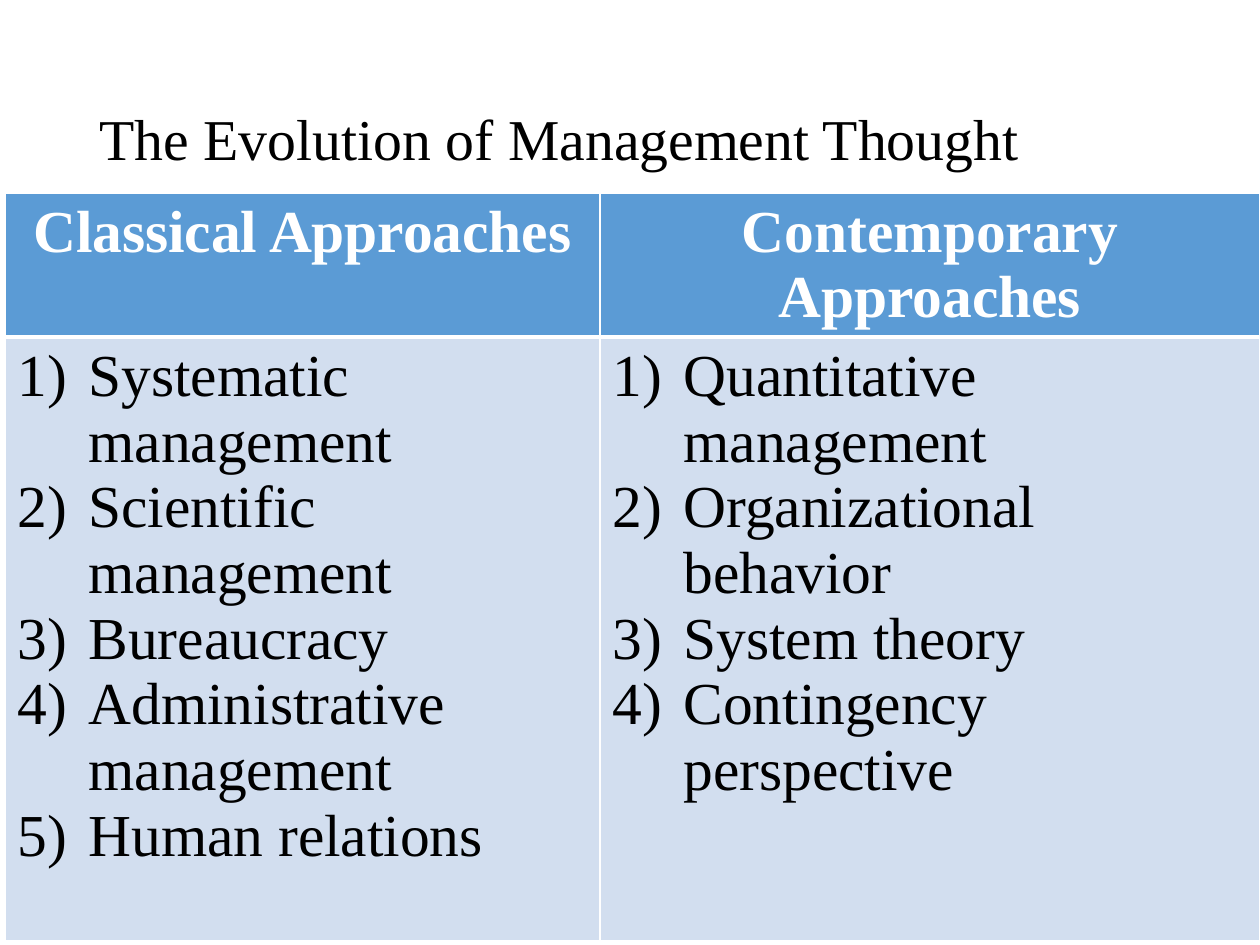
import pptx
import pptx.dml.color
import pptx.enum.text
import pptx.oxml.ns
import pptx.util
from lxml import etree

PX = 914400 / 126
FONT = "Times New Roman"
ALIGN = pptx.enum.text.PP_ALIGN
ANCHOR = pptx.enum.text.MSO_ANCHOR

HEADINGS = ["Classical Approaches", "Contemporary Approaches"]
APPROACHES = [
    ["Systematic management", "Scientific management", "Bureaucracy",
     "Administrative management", "Human relations"],
    ["Quantitative management", "Organizational behavior", "System theory",
     "Contingency perspective"],
]


def px(length):
    return pptx.util.Emu(round(length * PX))


def color(value):
    return pptx.dml.color.RGBColor.from_string(value)


def add_node(parent, tag, **attributes):
    node = etree.SubElement(parent, pptx.oxml.ns.qn(tag))
    for name, value in attributes.items():
        node.set(name, str(value))
    return node


class SlideBuilder:
    """Holds the table style and the current slide."""
    header_fill = "5B9BD5"
    body_fill = "D2DEEF"
    white = "FFFFFF"
    black = "000000"
    table_size = 34

    def __init__(self, slide):
        self.slide = slide

    def format_runs(self, para, size, text_color, bold=False):
        for run in para.runs:
            run.font.name = FONT
            run.font.size = pptx.util.Pt(size)
            run.font.bold = bold
            run.font.color.rgb = color(text_color)

    def title(self, text, left, top, width, height):
        box = self.slide.shapes.title
        box.left, box.top = px(left), px(top)
        box.width, box.height = px(width), px(height)
        frame = box.text_frame
        frame.text = text
        frame.vertical_anchor = ANCHOR.MIDDLE
        para = frame.paragraphs[0]
        para.alignment = ALIGN.LEFT
        para.line_spacing = 0.9
        self.format_runs(para, 33, self.black)

    def borders(self, cell, widths):
        properties = cell._tc.get_or_add_tcPr()
        for side, width in widths.items():
            line = add_node(properties, f"a:ln{side}", w=pptx.util.Pt(width))
            fill = add_node(line, "a:solidFill")
            add_node(fill, "a:srgbClr", val=self.white)

    def fill(self, cell, value):
        cell.fill.solid()
        cell.fill.fore_color.rgb = color(value)

    def header_cell(self, cell, text):
        self.borders(cell, {"L": 1, "R": 1, "T": 1, "B": 3})
        self.fill(cell, self.header_fill)
        cell.text_frame.text = text
        para = cell.text_frame.paragraphs[0]
        para.alignment = ALIGN.CENTER
        self.format_runs(para, self.table_size, self.white, bold=True)

    def list_cell(self, cell, items):
        self.borders(cell, {"L": 1, "R": 1, "T": 3, "B": 1})
        self.fill(cell, self.body_fill)
        cell.text_frame.text = "\n".join(items)
        indent = px(71)
        for para in cell.text_frame.paragraphs:
            properties = para._p.get_or_add_pPr()
            properties.set("marL", str(indent))
            properties.set("indent", str(-indent))
            add_node(properties, "a:buFont", typeface="+mj-lt")
            add_node(properties, "a:buAutoNum", type="arabicParenR")
            self.format_runs(para, self.table_size, self.black)

    def table(self, left, top, widths, heights, headings, lists):
        table = self.slide.shapes.add_table(
            len(heights), len(widths), px(left), px(top),
            px(sum(widths)), px(sum(heights))).table
        for row, height in zip(table.rows, heights):
            row.height = px(height)
        for index, width in enumerate(widths):
            table.columns[index].width = px(width)
            self.header_cell(table.cell(0, index), headings[index])
            self.list_cell(table.cell(1, index), lists[index])


def main():
    deck = pptx.Presentation()
    deck.slide_width, deck.slide_height = px(1260), px(945)
    builder = SlideBuilder(deck.slides.add_slide(deck.slide_layouts[5]))

    # Title
    builder.title("The Evolution of Management Thought", 87, 50, 1086, 183)

    # Two-column comparison
    builder.table(5, 193, [595, 660], [143, 604], HEADINGS, APPROACHES)

    deck.save("out.pptx")


if __name__ == "__main__":
    main()
